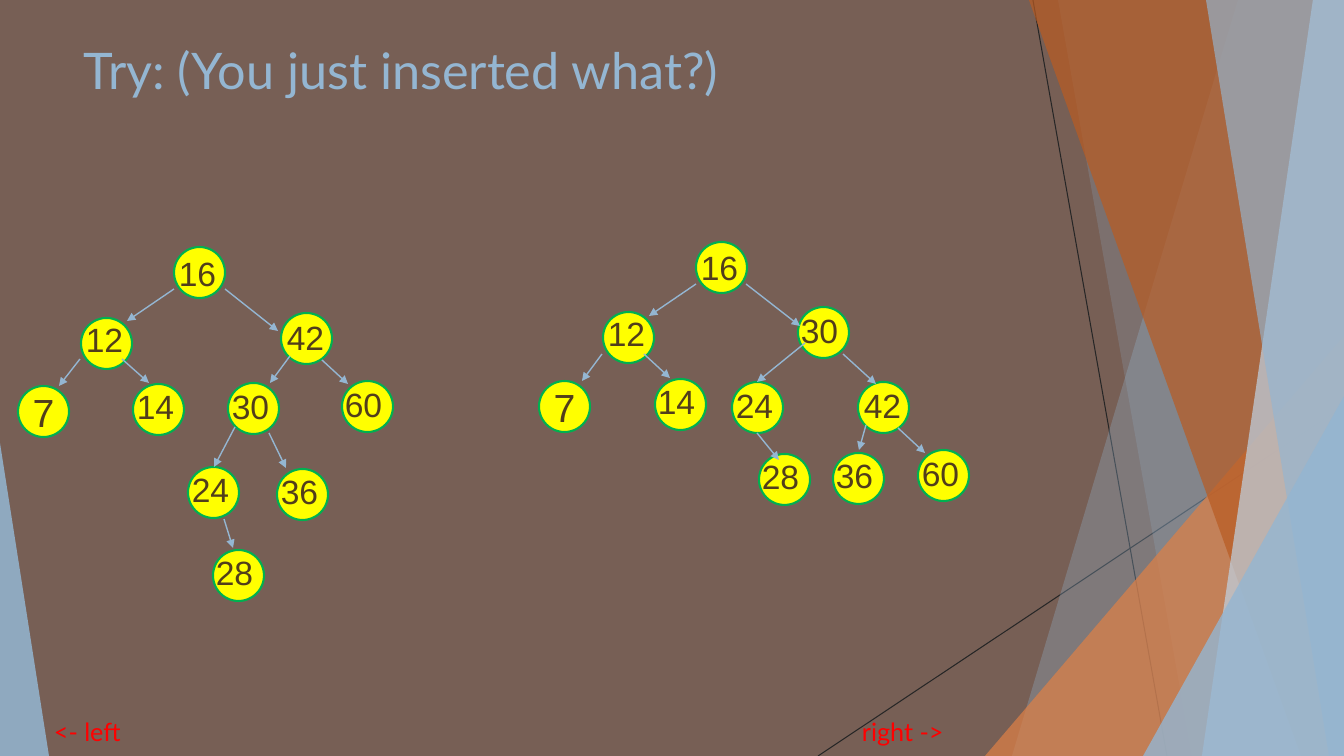
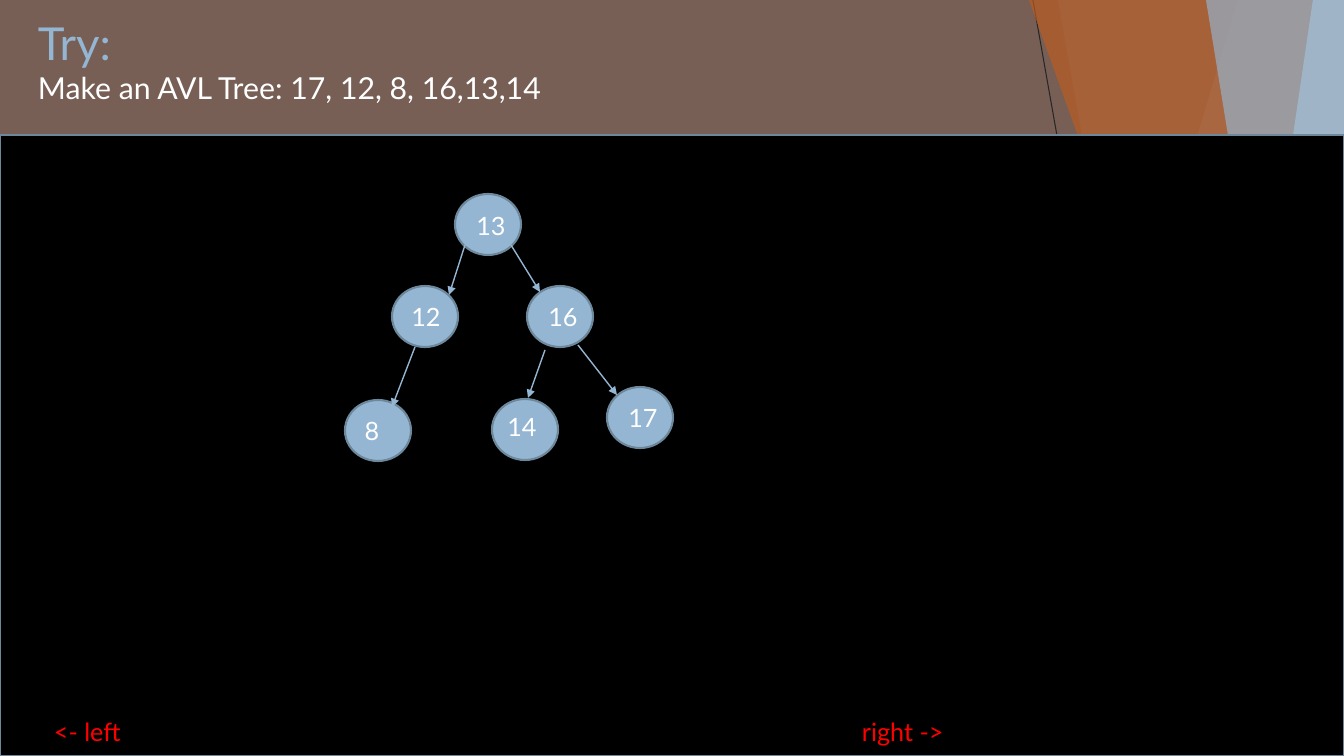
from pptx import Presentation
from pptx.dml.color import RGBColor
from pptx.enum.shapes import MSO_CONNECTOR as Link, MSO_SHAPE as Preset
from pptx.enum.text import MSO_ANCHOR as Anchor, PP_ALIGN as Align
from pptx.oxml.ns import qn
from pptx.util import Emu, Pt
from lxml.etree import SubElement

WIDTH, HEIGHT = 1344, 756
SCALE = 12192000 / WIDTH

COLORS = {
    "ground": "775F55", "blue": "94B6D2", "pale": "BFD3E4", "edge": "6D879B",
    "orange": "DD8047", "rust": "B95B22", "hairline": "262626", "black": "000000",
    "white": "FFFFFF", "red": "FF0000", "yellow": "FFFF00", "green": "00B050",
    "brown": "513E1B",
}

HAIRLINES = [(1033, 0, 1167, 756), (1344, 406, 818, 756)]
# (kind, geometry, colour, opacity)
BANDS = [
    ("band", (1238, 1012), "blue", 30),
    ("band", (1058, 1192), "blue", 20),
    ("right wedge", (985, 336, 359, 420), "orange", 72),
    ("band", (1029, 1301), "rust", 70),
    ("band", (1313, 1202), "pale", 70),
    ("band", (1206, 1329), "blue", 65),
    ("right wedge", (1143, 396, 201, 360), "blue", 80),
    ("left wedge", (0, 443, 49, 313), "blue", 85),
]
WEDGE_APEX = {"left wedge": 0, "right wedge": 1}
FOOTERS = [("<- left", (44, 711, 200, 40)), ("right ->", (852, 711, 200, 40))]
FOOTER_FONT = {"size": 18, "name": "Lato", "color": "red"}

YELLOW_NODE = {
    "size": (51, 51), "fill": "yellow", "line": "green",
    "font": {"size": 24, "name": "Arial", "color": "brown"},
}
BLUE_NODE = {
    "size": (66, 61), "fill": "blue", "line": "edge",
    "font": {"size": 18, "name": "Lato", "color": "white"},
}

SLIDES = [
    {
        "title_box": (74, 34, 948, 80),
        "title": [("Try: (You just inserted what?)", 36, "blue")],
        "panel": None,
        "style": YELLOW_NODE,
        "nodes": [
            ("16", 174, 247, -2, 1), ("12", 81, 318, -2, -4), ("42", 281, 313, -1, -1),
            ("30", 228, 383, -3, -2), ("24", 188, 467, -3, -3), ("14", 133, 384, -3, -3),
            ("7", 18, 386, 0, 0), ("60", 342, 381, -4, -2), ("36", 277, 469, -3, -3),
            ("28", 213, 550, -4, -3),
            ("16", 696, 242, -2, 0), ("12", 603, 312, -2, -4), ("14", 655, 379, -4, -3),
            ("7", 539, 381, 0, 0), ("42", 858, 382, -1, -2), ("30", 798, 307, -4, -2),
            ("24", 732, 382, -3, -2), ("60", 918, 450, -3, -2), ("36", 833, 453, -4, -3),
            ("28", 759, 454, -4, -3),
        ],
        "larger": {"7": 28},
        "arrows": [
            (225, 289, 278, 331), (290, 356, 270, 383), (174, 289, 127, 321),
            (122, 359, 149, 383), (80, 359, 59, 386), (235, 427, 214, 467),
            (322, 360, 348, 384), (269, 433, 286, 468), (224, 519, 233, 548),
            (746, 284, 800, 326), (696, 284, 649, 316), (644, 354, 670, 378),
            (602, 354, 582, 381), (866, 425, 859, 450), (805, 343, 757, 382),
            (898, 428, 925, 453), (843, 354, 876, 384), (757, 433, 779, 460),
        ],
    },
    {
        "title_box": (28, 10, 1004, 103),
        "title": [("Try:", 32.4, "blue"),
                  ("Make an AVL Tree: 17, 12, 8, 16,13,14", 21.6, "white")],
        "panel": (0, 135, 1344, 621),
        "style": BLUE_NODE,
        "nodes": [
            ("12", 392, 286, 1, 0), ("8", 345, 400, -6, 0), ("17", 607, 387, 3, 0),
            ("16", 527, 286, 3, 0), ("14", 492, 399, -3, -3), ("13", 455, 194, 3, 1),
        ],
        "larger": {},
        "arrows": [
            (415, 347, 392, 407), (545, 350, 528, 398), (578, 345, 617, 395),
            (511, 245, 540, 292), (465, 245, 449, 295),
        ],
    },
]


def px(*lengths):
    return [Emu(round(length * SCALE)) for length in lengths]


def rgb(name):
    return RGBColor.from_string(COLORS[name])


def set_font(font, values):
    for key, value in values.items():
        if key == "color":
            font.color.rgb = rgb(value)
        else:
            setattr(font, key, Pt(value) if key == "size" else value)


def paint(shape, fill, line=None, opacity=100):
    shape.shadow.inherit = False
    shape.fill.solid()
    shape.fill.fore_color.rgb = rgb(fill)
    if opacity < 100:
        color = shape._element.spPr.find(qn("a:solidFill")).find(qn("a:srgbClr"))
        SubElement(color, qn("a:alpha"), val=str(opacity * 1000))
    if line:
        shape.line.color.rgb = rgb(line)
        shape.line.width = Pt(1.5)
    else:
        shape.line.fill.background()


def add_line(slide, ends, color, width, arrow=False):
    link = slide.shapes.add_connector(Link.STRAIGHT, *px(*ends))
    link.line.color.rgb = rgb(color)
    link.line.width = Pt(width)
    if arrow:
        SubElement(link.line._get_or_add_ln(), qn("a:tailEnd"), type="triangle")
    SubElement(link._element.spPr, qn("a:effectLst"))


def add_text(slide, box, lines, anchor=Anchor.TOP):
    frame = slide.shapes.add_textbox(*px(*box)).text_frame
    frame.word_wrap = True
    frame.vertical_anchor = anchor
    paragraph = frame.paragraphs[0]
    for index, (words, font) in enumerate(lines):
        if index:
            paragraph.add_line_break()
        run = paragraph.add_run()
        run.text = words
        set_font(run.font, font)


def add_backdrop(slide):
    for ends in HAIRLINES:
        add_line(slide, ends, "hairline", 0.75)
    for kind, geometry, color, opacity in BANDS:
        if kind == "band":
            top, bottom = geometry
            outline = slide.shapes.build_freeform(top, 0, scale=SCALE)
            outline.add_line_segments([(WIDTH, 0), (WIDTH, HEIGHT), (bottom, HEIGHT)])
            piece = outline.convert_to_shape()
        else:
            piece = slide.shapes.add_shape(Preset.ISOSCELES_TRIANGLE, *px(*geometry))
            piece.adjustments[0] = WEDGE_APEX[kind]
        paint(piece, color, opacity=opacity)


def add_node(slide, node, style, larger):
    value, left, top, right_shift, down_shift = node
    circle = slide.shapes.add_shape(Preset.OVAL, *px(left, top, *style["size"]))
    paint(circle, style["fill"], style["line"])
    frame = circle.text_frame
    margins = {
        "margin_left": max(0, 2 * right_shift), "margin_right": max(0, -2 * right_shift),
        "margin_top": max(0, 2 * down_shift), "margin_bottom": max(0, -2 * down_shift),
    }
    for side, length in margins.items():
        setattr(frame, side, px(length)[0])
    frame.word_wrap = False
    frame.vertical_anchor = Anchor.MIDDLE
    paragraph = frame.paragraphs[0]
    paragraph.alignment = Align.CENTER
    run = paragraph.add_run()
    run.text = value
    set_font(run.font, {**style["font"], "size": larger.get(value, style["font"]["size"])})


def add_tree_slide(deck, content):
    slide = deck.slides.add_slide(deck.slide_layouts[6])
    add_backdrop(slide)
    if content["panel"]:
        panel = slide.shapes.add_shape(Preset.RECTANGLE, *px(*content["panel"]))
        paint(panel, "black", "edge")
    add_text(slide, content["title_box"],
             [(words, {"size": size, "name": "Lato", "color": color})
              for words, size, color in content["title"]])
    for words, box in FOOTERS:
        add_text(slide, box, [(words, FOOTER_FONT)], Anchor.MIDDLE)
    for node in content["nodes"]:
        add_node(slide, node, content["style"], content["larger"])
    for ends in content["arrows"]:
        add_line(slide, ends, "blue", 1, arrow=True)


def main():
    """Build the two AVL tree slides."""
    deck = Presentation()
    deck.slide_width, deck.slide_height = px(WIDTH, HEIGHT)
    ground = deck.slide_master.background.fill
    ground.solid()
    ground.fore_color.rgb = rgb("ground")
    for content in SLIDES:
        add_tree_slide(deck, content)
    deck.save("out.pptx")


if __name__ == "__main__":
    main()
